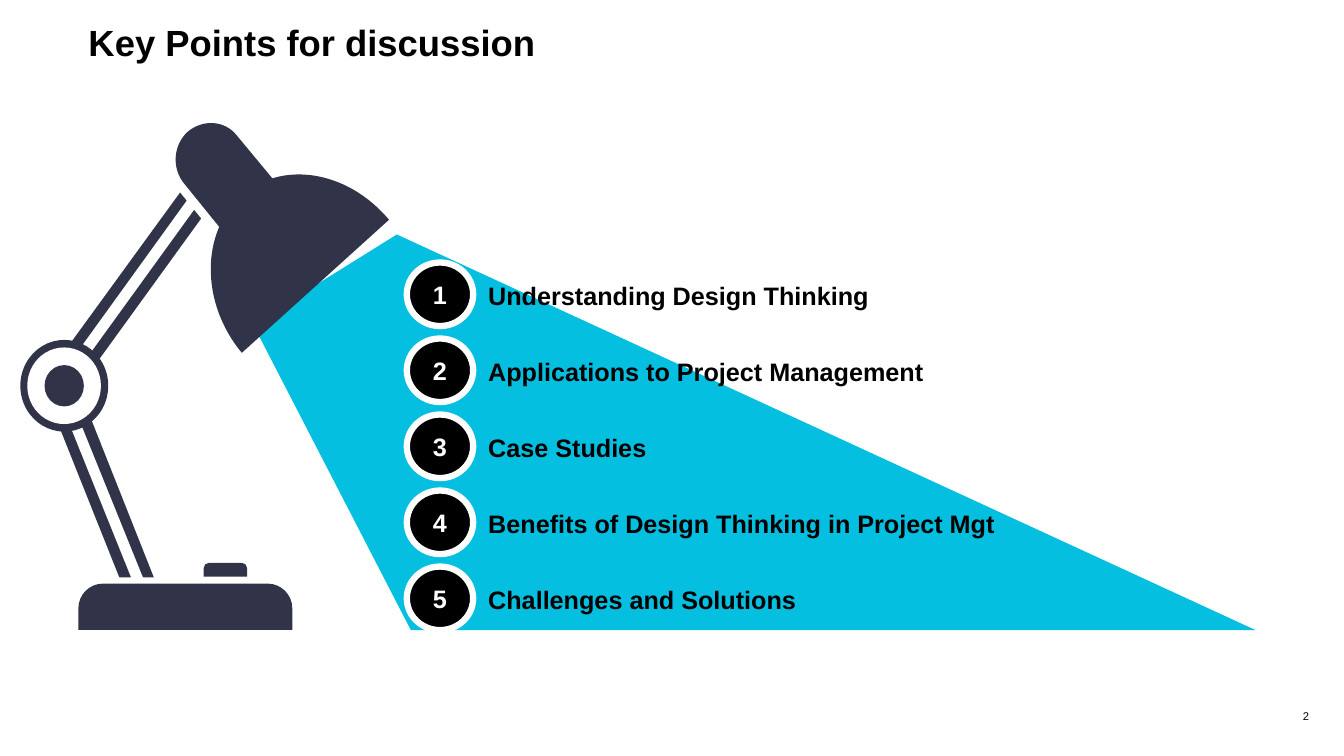
import pptx
import pptx.dml.color
import pptx.enum.shapes
import pptx.enum.text
import pptx.oxml.ns
import pptx.util
from dataclasses import dataclass
from lxml import etree

Pt = pptx.util.Pt
Shape = pptx.enum.shapes.MSO_SHAPE
Anchor = pptx.enum.text.MSO_ANCHOR
Align = pptx.enum.text.PP_ALIGN
Fit = pptx.enum.text.MSO_AUTO_SIZE
qn = pptx.oxml.ns.qn


@dataclass(frozen=True)
class Theme:
    font: str = "Arial"
    navy: str = "313449"
    beam: str = "05BFE0"
    white: str = "FFFFFF"
    black: str = "000000"
    title: int = 26
    item: int = 18
    page: int = 8


THEME = Theme()

# Label, width and height of each point
ITEMS = [
    ("Understanding Design Thinking", 355, 28.8),
    ("Applications to Project Management", 355, 51.1),
    ("Case Studies", 355, 28.8),
    ("Benefits of Design Thinking in Project Mgt", 383, 28.8),
    ("Challenges and Solutions", 383, 28.8),
]
STEP = 54.3

# Outlines: a pair is a corner, six numbers are a cubic curve
BEAM = [(896.9, 450.1), (293.5, 450.1), (180.7, 231.6), (283.5, 167.5)]
ARMS = [
    [(96.5, 419.8), (89.3, 422.6), (42.5, 305.3), (49, 301.7)],
    [(110.2, 413.3), (103.7, 416.2), (56.2, 298.8), (63.4, 295.2)],
    [(56.9, 249.1), (51.1, 244.1), (131.8, 133.2), (137.5, 137.5)],
    [(70.6, 257), (64.8, 252), (144, 142.6), (149.8, 147.6)],
]
NECK = [(133.9, 94.3), (123.8, 103.7, 122.4, 120.2, 131.8, 131.4),
        (161.3, 167.8), (199.4, 133.2), (169.4, 97),
        (160.6, 85.7, 144.7, 85, 133.9, 94.3)]
SHADE = [(172.1, 140.4), (143.3, 166.3, 143.3, 216.7, 172.8, 252),
         (277.9, 157), (248.4, 121.7, 200.9, 113.8, 172.1, 140.4)]


def rgb(color):
    return pptx.dml.color.RGBColor.from_string(color)


def paint(shape, fill, line=None, width=0):
    shape.shadow.inherit = False
    shape.fill.solid()
    shape.fill.fore_color.rgb = rgb(fill)
    if line:
        shape.line.color.rgb = rgb(line)
        shape.line.width = Pt(width)
    else:
        shape.line.fill.background()


def write(shape, text, size, color, align, bold=True, anchor=Anchor.TOP,
          pad=(0, 0)):
    frame = shape.text_frame
    frame.text = text
    frame.word_wrap = True
    frame.auto_size = Fit.NONE
    frame.vertical_anchor = anchor
    frame.margin_left = frame.margin_right = Pt(pad[0])
    frame.margin_top = frame.margin_bottom = Pt(pad[1])
    para = frame.paragraphs[0]
    para.alignment = align
    font = para.runs[0].font
    font.name, font.size, font.bold = THEME.font, Pt(size), bold
    font.color.rgb = rgb(color)
    return para


def bend(shape, parts):
    """Join the three points of each curve into one cubic segment."""
    lines = iter(list(shape.element.iter(qn("a:lnTo"))))
    for part in parts:
        line = next(lines)
        if len(part) == 6:
            line.tag = qn("a:cubicBezTo")
            for extra in (next(lines), next(lines)):
                line.append(extra[0])
                extra.getparent().remove(extra)


def outline(group, parts, color, dx=0, dy=0):
    dots = [(Pt(part[i] + dx), Pt(part[i + 1] + dy))
            for part in parts for i in range(0, len(part), 2)]
    pen = group.shapes.build_freeform(*dots[0])
    pen.add_line_segments(dots[1:], close=False)
    shape = pen.convert_to_shape()
    bend(shape, parts[1:])
    for track in shape.element.iter(qn("a:path")):
        etree.SubElement(track, qn("a:close"))
    paint(shape, color)


def block(x, y, w, h, r):
    """Outline of a box with rounded top corners."""
    k = 0.45 * r
    right, low = x + w, y + h
    return [(right, low), (right, y + r),
            (right, y + k, right - k, y, right - r, y), (x + r, y),
            (x + k, y, x, y + k, x, y + r), (x, low)]


def disc(group, x, y, w, h, fill, line=None, width=0):
    shape = group.shapes.add_shape(Shape.OVAL, Pt(x), Pt(y), Pt(w), Pt(h))
    paint(shape, fill, line, width)
    return shape


def label(group, x, y, w, h, *args, **style):
    box = group.shapes.add_textbox(Pt(x), Pt(y), Pt(w), Pt(h))
    write(box, *args, **style)


def heading(slide, text):
    shape = slide.shapes.title
    shape.left, shape.top = Pt(63.2), Pt(18)
    shape.width, shape.height = Pt(896.8), Pt(38.9)
    para = write(shape, text, THEME.title, THEME.black, Align.LEFT)
    para.line_spacing = 0.9


def lamp(slide):
    group = slide.shapes.add_group_shape()
    # Lower arm and base
    for arm in ARMS[:2]:
        outline(group, arm, THEME.navy)
    base = block(56, 416.9, 152.8, 33.1, 17.6)
    outline(group, base, THEME.white, -4.7, -4.5)
    outline(group, base, THEME.navy)
    outline(group, block(145.5, 402, 31, 9.9, 3.8), THEME.navy)
    # Upper arm, neck and joint
    for arm in ARMS[2:]:
        outline(group, arm, THEME.navy)
    disc(group, 14.5, 242.8, 62.8, 65.5, THEME.navy)
    outline(group, NECK, THEME.white, -4.4, 4.4)
    outline(group, NECK, THEME.navy)
    disc(group, 19.5, 248.2, 52.6, 54.7, THEME.white)
    disc(group, 31.8, 260.8, 28.1, 29.5, THEME.navy)
    # Light and shade
    outline(group, BEAM, THEME.beam)
    outline(group, SHADE, THEME.navy)


def point(slide, index, text, width, height):
    group = slide.shapes.add_group_shape()
    drop = index * STEP
    label(group, 340.2, 196.9 + drop, width, height, text, THEME.item,
          THEME.black, Align.LEFT, pad=(8.5, 3.6))
    badge = disc(group, 290.6, 187.5 + drop, 47.4, 45.4,
                 THEME.black, THEME.white, 4.5)
    write(badge, str(index + 1), THEME.item, THEME.white, Align.CENTER,
          anchor=Anchor.MIDDLE)


def main():
    deck = pptx.Presentation()
    deck.slide_width, deck.slide_height = Pt(960), Pt(540)
    slide = deck.slides.add_slide(deck.slide_layouts[5])
    heading(slide, "Key Points for discussion")
    lamp(slide)
    for index, item in enumerate(ITEMS):
        point(slide, index, *item)
    # Page number
    label(slide, 902.7, 500.4, 32.4, 15.8, "2", THEME.page, THEME.black,
          Align.RIGHT, bold=False, anchor=Anchor.BOTTOM)
    deck.save("out.pptx")


if __name__ == "__main__":
    main()
